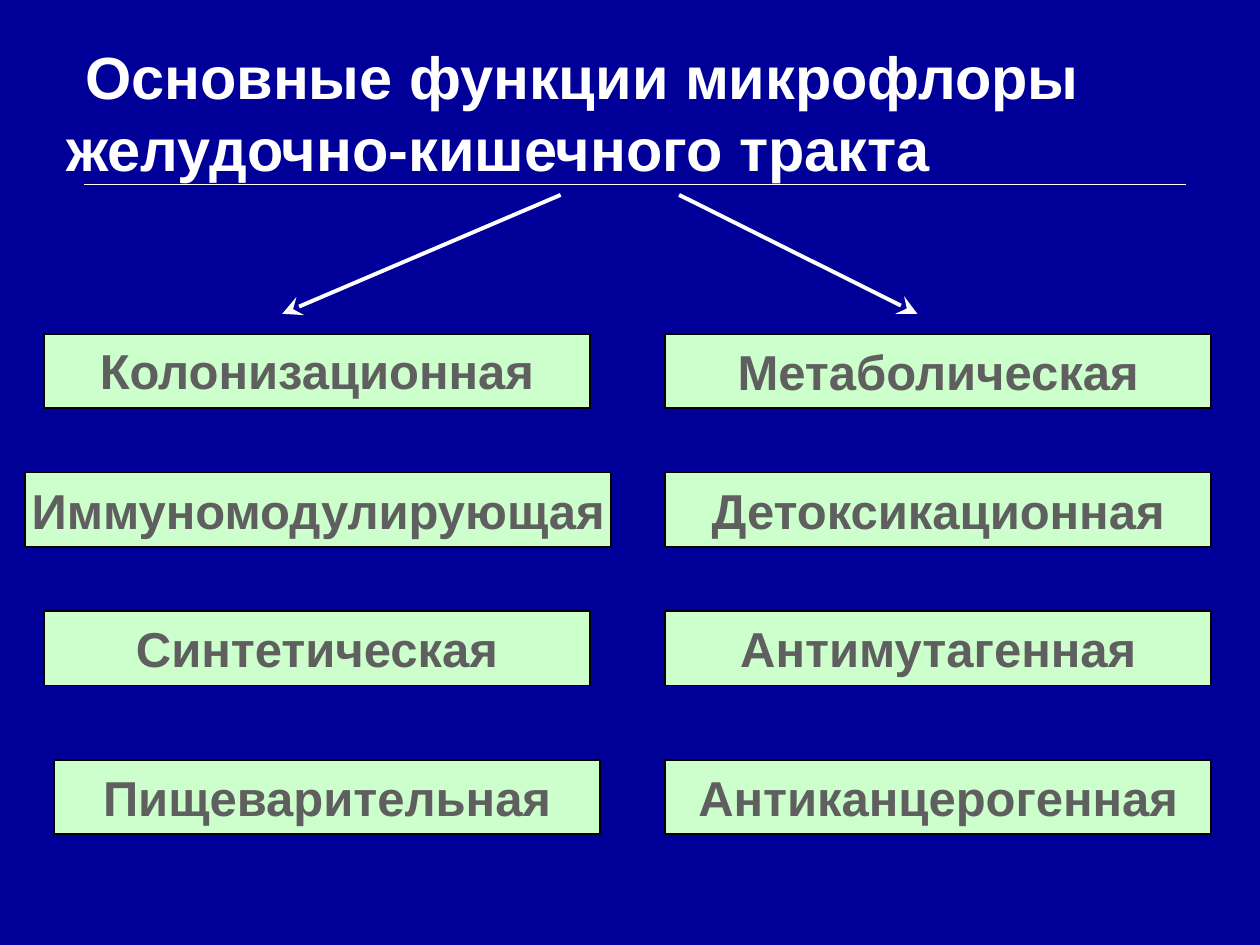
from lxml.etree import SubElement
from pptx import Presentation
from pptx.dml.color import RGBColor
from pptx.enum.shapes import MSO_CONNECTOR, MSO_SHAPE
from pptx.enum.text import MSO_ANCHOR, PP_ALIGN
from pptx.oxml.ns import qn
from pptx.util import Pt

ROW_TOPS = (190.8, 270, 349.2, 434.2)
LEFT_FUNCTIONS = (
    ("Колонизационная", 25.2, 311.8),
    ("Иммуномодулирующая", 14.4, 334.8),
    ("Синтетическая", 25.2, 311.8),
    ("Пищеварительная", 31, 311.8),
)
RIGHT_FUNCTIONS = tuple(
    (name, 380.2, 311.8)
    for name in ("Метаболическая", "Детоксикационная", "Антимутагенная", "Антиканцерогенная")
)


def color(hex_code):
    return RGBColor.from_string(hex_code)


def format_run(run, size, hex_code):
    run.font.name = "Arial"
    run.font.size = Pt(size)
    run.font.bold = True
    run.font.color.rgb = color(hex_code)


def add_title(slide):
    title = slide.shapes.add_textbox(Pt(31), Pt(15.1), Pt(652.3), Pt(90))
    title.text_frame.word_wrap = True
    heading = title.text_frame.paragraphs[0]
    for text, size, hex_code in (
        (" ", 38, "006633"),
        ("Основные функции микрофлоры желудочно-кишечного тракта", 34, "FFFFFF"),
    ):
        run = heading.add_run()
        run.text = text
        format_run(run, size, hex_code)


def add_function(slide, name, left, top, width, anchor):
    box = slide.shapes.add_shape(
        MSO_SHAPE.RECTANGLE, Pt(left), Pt(top), Pt(width), Pt(42.5))
    box.shadow.inherit = False
    box.fill.solid()
    box.fill.fore_color.rgb = color("CCFFCC")
    box.line.color.rgb = color("000000")
    box.line.width = Pt(1)
    frame = box.text_frame
    frame.text = name
    frame.word_wrap = False
    frame.vertical_anchor = anchor
    frame.paragraphs[0].alignment = PP_ALIGN.CENTER
    format_run(frame.paragraphs[0].runs[0], 28, "5F5F5F")


def add_line(slide, start, end, width, arrow=False):
    line = slide.shapes.add_connector(
        MSO_CONNECTOR.STRAIGHT, *(Pt(value) for value in start + end))
    line.line.color.rgb = color("FFFFFF")
    line.line.width = Pt(width)
    if arrow:
        SubElement(line.line._get_or_add_ln(), qn("a:tailEnd"),
                   type="stealth", w="lg", len="lg")
    SubElement(line._element.spPr, qn("a:effectLst"))


def main():
    prs = Presentation()
    prs.slide_width, prs.slide_height = Pt(720), Pt(540)
    slide = prs.slides.add_slide(prs.slide_layouts[6])
    slide.background.fill.solid()
    slide.background.fill.fore_color.rgb = color("000099")

    add_title(slide)
    for functions in (LEFT_FUNCTIONS, RIGHT_FUNCTIONS):
        for top, (name, left, width) in zip(ROW_TOPS, functions):
            first = name == LEFT_FUNCTIONS[0][0]
            anchor = MSO_ANCHOR.TOP if first else MSO_ANCHOR.MIDDLE
            add_function(slide, name, left, top, width, anchor)
    add_line(slide, (320.4, 111.4), (161.3, 179.3), 2.25, arrow=True)
    add_line(slide, (388.1, 111.4), (524.2, 179.3), 2.25, arrow=True)
    add_line(slide, (48, 105.6), (677.5, 105.6), 0.75)

    prs.save("out.pptx")


if __name__ == "__main__":
    main()
